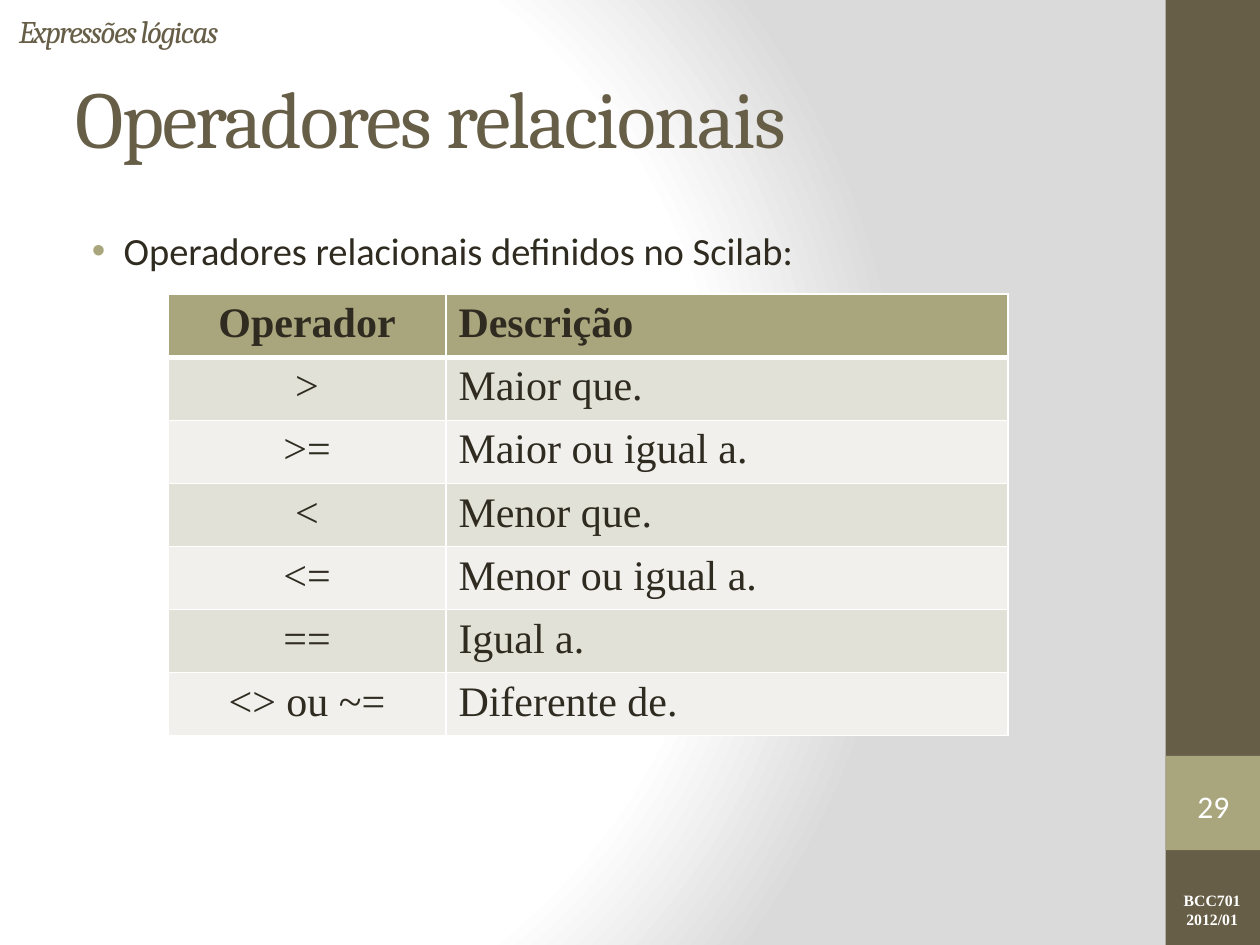
from pptx import Presentation
from pptx.dml.color import RGBColor
from pptx.enum.shapes import MSO_SHAPE
from pptx.enum.text import MSO_ANCHOR, PP_ALIGN
from pptx.oxml import parse_xml
from pptx.oxml.ns import nsdecls
from pptx.util import Cm, Pt

BROWN = "675E47"
OLIVE = "A9A57C"
INK = "2F2B20"
WHITE = "FFFFFF"
BANDS = ("E2E1D7", "F1F0EC")
OPERATORS = [
    ("Operador", "Descrição"),
    (">", "Maior que."),
    (">=", "Maior ou igual a."),
    ("<", "Menor que."),
    ("<=", "Menor ou igual a."),
    ("==", "Igual a."),
    ("<> ou ~=", "Diferente de."),
]


def color(value):
    return RGBColor.from_string(value)


def place(shape, left, top, width, height):
    shape.left, shape.top = Cm(left), Cm(top)
    shape.width, shape.height = Cm(width), Cm(height)


def write(frame, text, font, size, ink, align=PP_ALIGN.LEFT, bold=False,
          italic=False, spacing=None):
    frame.text = text
    for paragraph in frame.paragraphs:
        paragraph.alignment = align
        for span in paragraph.runs:
            span.font.name = font
            span.font.size = Pt(size)
            span.font.bold = bold
            span.font.italic = italic
            span.font.color.rgb = color(ink)
            if spacing is not None:
                span.font._element.set("spc", str(spacing))


def paint_background(page):
    stops = "".join(
        f'<a:gs pos="{position}000"><a:srgbClr val="{value}"/></a:gs>'
        for position, value in ((0, WHITE), (75, WHITE), (100, "DADADA")))
    page._element.cSld.insert(0, parse_xml(
        f'<p:bg {nsdecls("p", "a")}><p:bgPr><a:gradFill rotWithShape="1">'
        f'<a:gsLst>{stops}</a:gsLst><a:path path="circle">'
        '<a:fillToRect l="20000" t="50000" r="100000" b="50000"/></a:path>'
        '</a:gradFill><a:effectLst/></p:bgPr></p:bg>'))


def add_panel(page, top, height, fill):
    panel = page.shapes.add_shape(
        MSO_SHAPE.RECTANGLE, Cm(23.5), Cm(top), Cm(1.9), Cm(height))
    panel.shadow.inherit = False
    panel.fill.solid()
    panel.fill.fore_color.rgb = color(fill)
    panel.line.fill.background()


def add_label(page, bounds, text, *style, anchor=MSO_ANCHOR.TOP, **options):
    box = page.shapes.add_textbox(*map(Cm, bounds))
    box.text_frame.word_wrap = True
    box.text_frame.vertical_anchor = anchor
    write(box.text_frame, text, *style, **options)


def add_page_number(page, number):
    bracket = page.shapes.add_shape(
        MSO_SHAPE.DOUBLE_BRACKET, Cm(23.7), Cm(15.7), Cm(1.52), Cm(1.1))
    bracket.shadow.inherit = False
    bracket.fill.background()
    bracket.line.fill.background()
    frame = bracket.text_frame
    frame.margin_left = frame.margin_right = 0
    frame.margin_top = frame.margin_bottom = 0
    frame.vertical_anchor = MSO_ANCHOR.MIDDLE
    write(frame, number, "Calibri", 18, WHITE, PP_ALIGN.CENTER)


def fill_title(page, text):
    title = page.shapes.title
    place(title, 1.27, 0.76, 21.16, 3.18)
    title.text_frame.vertical_anchor = MSO_ANCHOR.MIDDLE
    write(title.text_frame, text, "Cambria", 46, BROWN, spacing=-100)


def fill_body(page, text):
    body = page.placeholders[1]
    place(body, 1.27, 4.45, 21.16, 13.33)
    write(body.text_frame, text, "Calibri", 22, INK)
    paragraph = body.text_frame.paragraphs[0]
    paragraph.space_before = Pt(0)
    properties = paragraph._p.get_or_add_pPr()
    properties.set("marL", str(Cm(0.97)))
    properties.set("indent", str(Cm(-0.64)))
    for bullet in (f'<a:buClr {nsdecls("a")}><a:srgbClr val="{OLIVE}"/></a:buClr>',
                   f'<a:buFont {nsdecls("a")} typeface="Arial"/>',
                   f'<a:buChar {nsdecls("a")} char="•"/>'):
        properties.append(parse_xml(bullet))


def set_borders(cell, top, bottom):
    properties = cell._tc.get_or_add_tcPr()
    for side, width in (("L", 1), ("R", 1), ("T", top), ("B", bottom)):
        properties.append(parse_xml(
            f'<a:ln{side} {nsdecls("a")} w="{Pt(width)}"><a:solidFill>'
            f'<a:srgbClr val="{WHITE}"/></a:solidFill></a:ln{side}>'))


def add_operator_table(page):
    row_height = 1.03
    table = page.shapes.add_table(
        len(OPERATORS), 2, Cm(3.39), Cm(5.93), Cm(16.93),
        Cm(row_height * len(OPERATORS))).table
    for column, width in zip(table.columns, (5.6, 11.33)):
        column.width = Cm(width)
    for index, values in enumerate(OPERATORS):
        table.rows[index].height = Cm(row_height)
        header = index == 0
        fill = OLIVE if header else BANDS[(index - 1) % 2]
        for position, text in enumerate(values):
            cell = table.cell(index, position)
            align = PP_ALIGN.LEFT if position else PP_ALIGN.CENTER
            write(cell.text_frame, text, "Times New Roman", 24, INK, align, header)
            set_borders(cell, 3 if index == 1 else 1, 3 if header else 1)
            cell.fill.solid()
            cell.fill.fore_color.rgb = color(fill)


def main():
    deck = Presentation()
    deck.slide_width, deck.slide_height = Cm(25.4), Cm(19.05)
    page = deck.slides.add_slide(deck.slide_layouts[1])
    paint_background(page)
    add_panel(page, 0, 19.05, BROWN)
    add_panel(page, 15.24, 1.9, OLIVE)
    add_label(page, (23.52, 17.83, 1.83, 1.02), "BCC701\n2012/01",
              "Times New Roman", 9, WHITE, PP_ALIGN.CENTER, bold=True)
    fill_title(page, "Operadores relacionais")
    fill_body(page, "Operadores relacionais definidos no Scilab:")
    add_page_number(page, "29")
    add_label(page, (0.13, 0.2, 21.13, 0.86), "Expressões lógicas",
              "Cambria", 18, BROWN, anchor=MSO_ANCHOR.MIDDLE,
              italic=True, spacing=-100)
    add_operator_table(page)
    deck.save("out.pptx")


if __name__ == "__main__":
    main()
